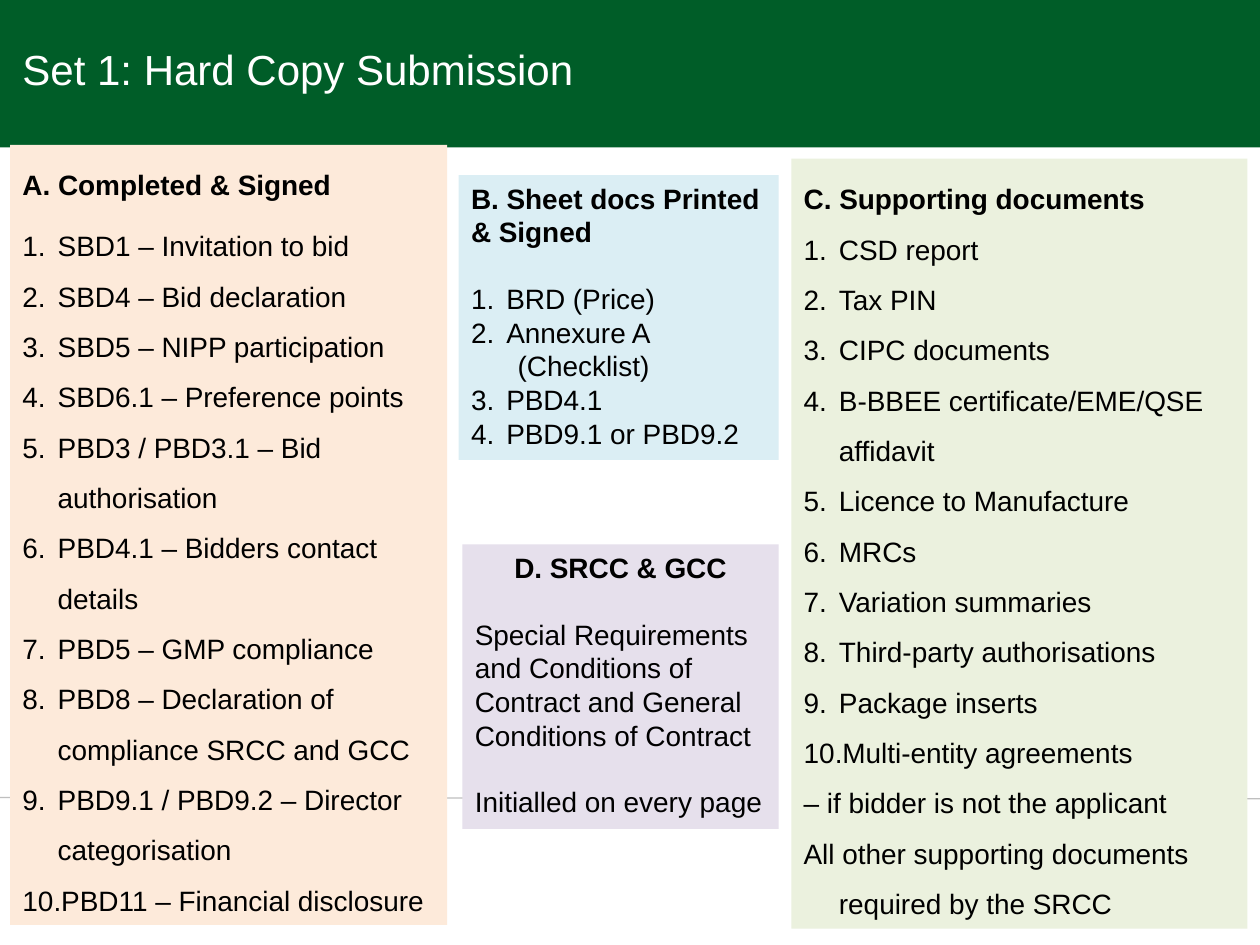
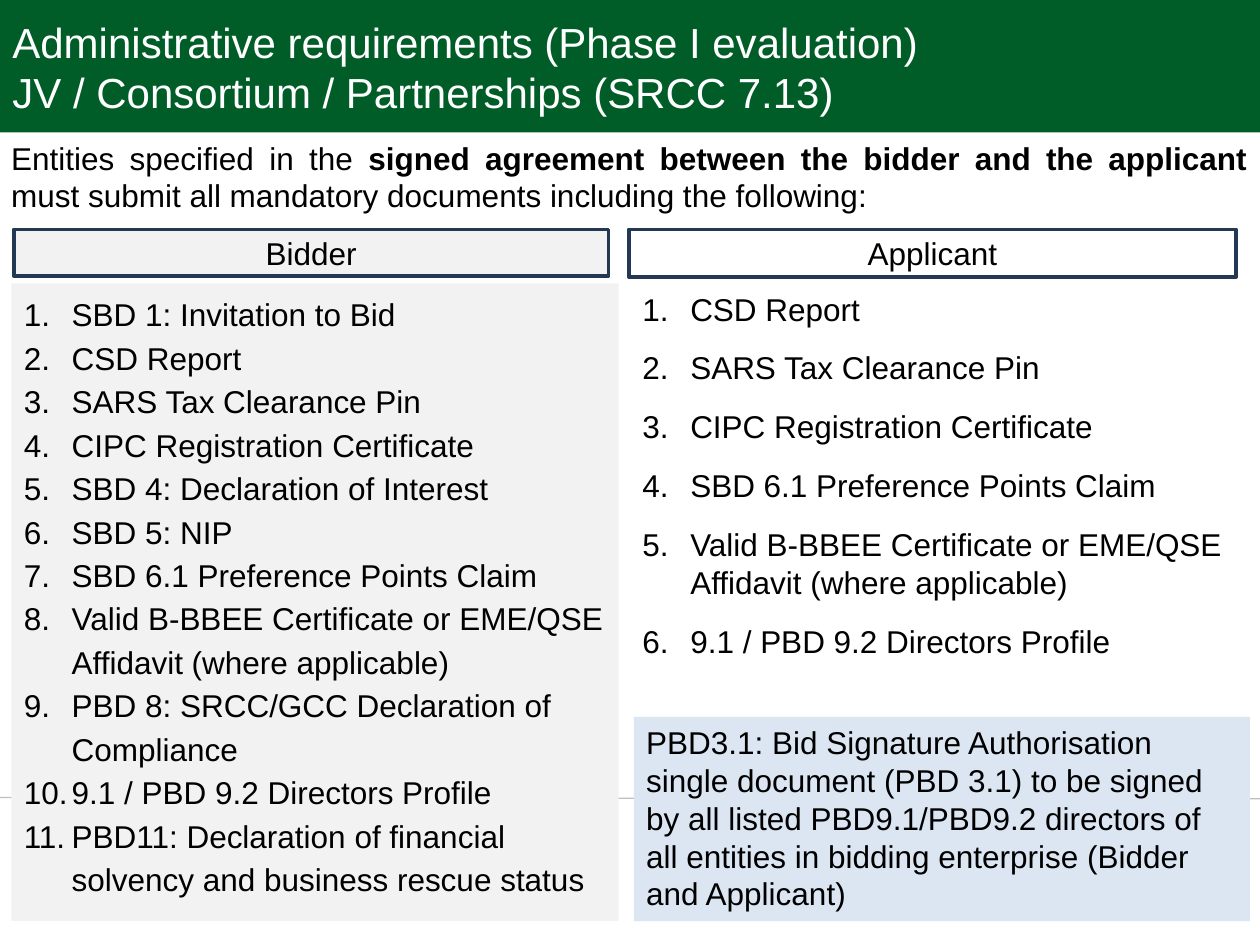
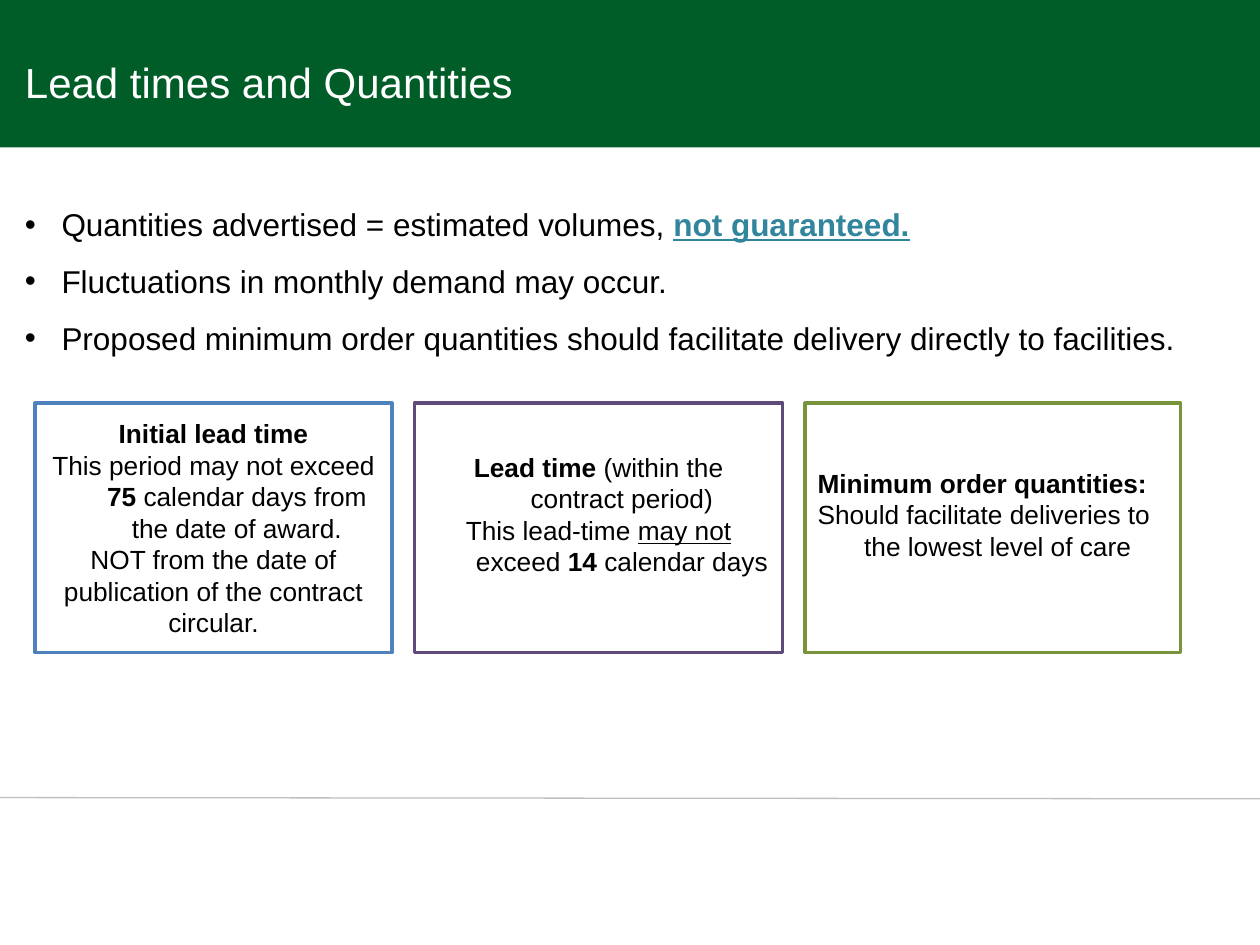
from pptx import Presentation
from pptx import util as u
from pptx.dml.color import RGBColor
from pptx.enum import shapes, text
from pptx.oxml.ns import qn
from lxml import etree

PX = 9144  # EMU per px, 100 px to the inch
FONT = "Arial"
GREEN = RGBColor(0x00, 0x5D, 0x28)
GREY_LINE = RGBColor(0xBF, 0xBF, 0xBF)
WHITE = RGBColor(0xFF, 0xFF, 0xFF)
BLACK = RGBColor(0x00, 0x00, 0x00)
PEACH = RGBColor(0xFD, 0xEA, 0xDA)
AQUA = RGBColor(0xDB, 0xEE, 0xF4)
LILAC = RGBColor(0xE6, 0xE0, 0xEC)
LIME = RGBColor(0xEB, 0xF1, 0xDE)
PALE_GREY = RGBColor(0xF2, 0xF2, 0xF2)
PALE_BLUE = RGBColor(0xDC, 0xE6, 0xF2)
NAVY = RGBColor(0x23, 0x39, 0x53)
TEAL = RGBColor(0x31, 0x85, 0x9C)
BLUE = RGBColor(0x4F, 0x81, 0xBD)
PURPLE = RGBColor(0x60, 0x4A, 0x7B)
OLIVE = RGBColor(0x77, 0x93, 0x3C)

CENTER, JUSTIFY = text.PP_ALIGN.CENTER, text.PP_ALIGN.JUSTIFY
TOP, MIDDLE, BOTTOM = text.MSO_ANCHOR.TOP, text.MSO_ANCHOR.MIDDLE, text.MSO_ANCHOR.BOTTOM


def add_box(page, place, fill=None, line=None, anchor=TOP, grow=True):
    """Add a rectangle, or a text box if it has no fill or line; return its text frame."""
    place = [n * PX for n in place]
    if fill is None and line is None:
        box = page.shapes.add_textbox(*place)
    else:
        box = page.shapes.add_shape(shapes.MSO_SHAPE.RECTANGLE, *place)
        box.shadow.inherit = False
        if fill is None:
            box.fill.background()
        else:
            box.fill.solid()
            box.fill.fore_color.rgb = fill
        if line is None:
            box.line.fill.background()
        else:
            box.line.color.rgb = line
            box.line.width = u.Pt(2)
    frame = box.text_frame
    frame.word_wrap = True
    frame.vertical_anchor = anchor
    fit = text.MSO_AUTO_SIZE
    frame.auto_size = fit.SHAPE_TO_FIT_TEXT if grow else fit.NONE
    return frame


def add_para(frame, spans, size, color=BLACK, align=text.PP_ALIGN.LEFT, left=0, hang=0,
             spacing=None, before=0, after=0, bullet=None, start=1, tab=None):
    """Add a paragraph of (words, style) spans; style holds b for bold, u for underline."""
    para = frame.paragraphs[0]
    if para.runs:
        para = frame.add_paragraph()
        para.space_before = u.Pt(before)
    para.alignment = align
    para.space_after = u.Pt(after)
    if spacing:
        para.line_spacing = spacing
    props = para._p.get_or_add_pPr()
    props.set("marL", str(left * PX))
    props.set("indent", str(-hang * PX))
    if bullet == "number":
        mark = etree.SubElement(props, qn("a:buAutoNum"), type="arabicPeriod")
        if start > 1:
            mark.set("startAt", str(start))
    elif bullet:
        etree.SubElement(props, qn("a:buFont"), typeface=FONT)
        etree.SubElement(props, qn("a:buChar"), char=bullet)
    else:
        etree.SubElement(props, qn("a:buNone"))
    if tab:
        tabs = etree.SubElement(props, qn("a:tabLst"))
        etree.SubElement(tabs, qn("a:tab"), pos=str(tab * PX), algn="l")
    if isinstance(spans, str):
        spans = [(spans, "")]
    for words, style in spans:
        span = para.add_run()
        span.text = words
        span.font.name = FONT
        span.font.size = u.Pt(size)
        span.font.bold = "b" in style
        span.font.underline = "u" in style
        span.font.color.rgb = TEAL if style == "bu" else color


deck = Presentation()
deck.slide_width, deck.slide_height = 1000 * PX, 750 * PX

# Shared band, footer rule and title
titles = [
    (["Set 1: Hard Copy Submission"], (8, 30, 792, 50), TOP),
    (["Administrative requirements (Phase I evaluation)",
      "JV / Consortium / Partnerships (SRCC 7.13)"], (0, 8, 799, 91), TOP),
    (["Lead times and Quantities"], (10, 9, 456, 81), BOTTOM),
]
pages = []
for title_lines, place, anchor in titles:
    page = deck.slides.add_slide(deck.slide_layouts[6])
    add_box(page, (0, 0, 1000, 117), GREEN)
    rule = page.shapes.add_connector(shapes.MSO_CONNECTOR.STRAIGHT,
                                     0, 633 * PX, 1000 * PX, 634 * PX)
    rule.line.color.rgb = GREY_LINE
    rule.line.width = u.Pt(0.75)
    etree.SubElement(rule._element.spPr, qn("a:effectLst"))
    frame = add_box(page, place, anchor=anchor, grow=anchor == TOP)
    for line_text in title_lines:
        add_para(frame, line_text, 24, WHITE)
    pages.append(page)
submission, partnerships, lead_times = pages

# Slide 1: documents in the hard copy set
numbered = dict(size=16, left=28, hang=28, bullet="number", tab=38)
BLANK_LINE = 19

excel_docs = add_box(submission, (364, 139, 254, 226), AQUA)
add_para(excel_docs, [("B. Sheet docs Printed & Signed", "b")], 16)
add_para(excel_docs, "BRD (Price)", before=BLANK_LINE, **numbered)
add_para(excel_docs, "Annexure A", **numbered)
add_para(excel_docs, "(Checklist)", 16, left=37)
for item in ["PBD4.1", "PBD9.1 or PBD9.2"]:
    add_para(excel_docs, item, start=3, **numbered)

signed_forms = [
    "SBD1 – Invitation to bid", "SBD4 – Bid declaration", "SBD5 – NIPP participation",
    "SBD6.1 – Preference points", "PBD3 / PBD3.1 – Bid authorisation",
    "PBD4.1 – Bidders contact details", "PBD5 – GMP compliance",
    "PBD8 – Declaration of compliance SRCC and GCC",
    "PBD9.1 / PBD9.2 – Director categorisation", "PBD11 – Financial disclosure",
]
supporting_docs = [
    "CSD report", "Tax PIN", "CIPC documents", "B-BBEE certificate/EME/QSE affidavit",
    "Licence to Manufacture", "MRCs", "Variation summaries", "Third-party authorisations",
    "Package inserts", "Multi-entity agreements",
]
add_box(submission, (602, 627, 307, 123), WHITE)
for heading, items, place, fill, gap in [
    ("A. Completed & Signed", signed_forms, (8, 115, 347, 619), PEACH, 6),
    ("C. Supporting documents", supporting_docs, (628, 126, 362, 611), LIME, 0),
]:
    column = add_box(submission, place, fill)
    add_para(column, [(heading, "b")], 16, spacing=1.5, after=gap)
    for item in items:
        add_para(column, item, spacing=1.5, after=gap if item == items[-1] else 0, **numbered)
add_para(column, "– if bidder is not the applicant", 16, spacing=1.5)
add_para(column, "All other supporting documents required by the SRCC", 16,
         left=28, hang=28, spacing=1.5)

conditions = add_box(submission, (367, 432, 251, 226), LILAC)
add_para(conditions, [("D. SRCC & GCC", "b")], 16, align=CENTER)
for sentence in ["Special Requirements and Conditions of Contract and General "
                 "Conditions of Contract", "Initialled on every page"]:
    add_para(conditions, sentence, 16, before=BLANK_LINE)

# Slide 2: what bidder and applicant must submit
add_box(partnerships, (0, 635, 1000, 114), WHITE)
intro = add_box(partnerships, (-1, 105, 1001, 71), WHITE)
add_para(intro, [("Entities specified in the ", ""),
                 ("signed agreement between the bidder and the applicant", "b"),
                 (" must submit all mandatory documents including the following:", "")],
         18, align=JUSTIFY, after=6)

signature = add_box(partnerships, (503, 569, 489, 162), PALE_BLUE)
add_para(signature, "PBD3.1: Bid Signature Authorisation", 18)
add_para(signature, "single document (PBD 3.1) to be signed by all listed PBD9.1/PBD9.2 "
         "directors of all entities in bidding enterprise (Bidder and Applicant)", 18)

for heading, place, fill in [("Bidder", (11, 182, 472, 37), PALE_GREY),
                             ("Applicant", (499, 182, 482, 38), None)]:
    frame = add_box(partnerships, place, fill, NAVY, MIDDLE, grow=False)
    add_para(frame, heading, 18, align=CENTER)

shared_certificate = "Valid B-BBEE Certificate or EME/QSE Affidavit (where applicable)"
company_docs = ["CSD Report", "SARS Tax Clearance Pin", "CIPC Registration Certificate"]
points_claim = "SBD 6.1 Preference Points Claim"
directors = "9.1 / PBD 9.2 Directors Profile"
numbered = dict(size=18, left=38, hang=38, bullet="number")

applicant = add_box(partnerships, (500, 225, 482, 306))
for item in company_docs + [points_claim, shared_certificate, directors]:
    add_para(applicant, item, before=6, after=6, **numbered)

bidder = add_box(partnerships, (9, 225, 482, 506), PALE_GREY)
bidder_docs = ["SBD 1: Invitation to Bid", *company_docs, "SBD 4: Declaration of Interest",
               "SBD 5: NIP", points_claim, shared_certificate,
               "PBD 8: SRCC/GCC Declaration of Compliance", directors,
               "PBD11: Declaration of financial solvency and business rescue status"]
for item in bidder_docs:
    add_para(bidder, item, spacing=1.15, tab=50,
             after=8 if item == bidder_docs[-1] else 0, **numbered)

# Slide 3: quantities and lead times
quantities = add_box(lead_times, (10, 143, 980, 177))
for spans in [
    [("Quantities advertised = estimated volumes, ", ""), ("not guaranteed.", "bu")],
    "Fluctuations in monthly demand may occur.",
    "Proposed minimum order quantities should facilitate delivery directly to facilities.",
]:
    add_para(quantities, spans, 18, left=29, hang=29, spacing=1.5, bullet="•")

hanging = dict(size=15, left=37, hang=37)
initial = add_box(lead_times, (28, 320, 283, 198), WHITE, BLUE, MIDDLE, grow=False)
add_para(initial, [("Initial lead time", "b")], align=CENTER, **hanging)
add_para(initial, [("This period may not exceed ", ""), ("75 ", "b"),
                   ("calendar days from the date of award.", "")], align=CENTER, **hanging)
add_para(initial, "NOT from the date of publication of the contract circular.", 15,
         align=CENTER)

contract = add_box(lead_times, (329, 320, 292, 198), WHITE, PURPLE, MIDDLE, grow=False)
add_para(contract, [("Lead time ", "b"), ("(within the contract period)", "")],
         align=CENTER, **hanging)
add_para(contract, [("This lead-time ", ""), ("may not ", "u"), ("exceed ", ""), ("14", "b"),
                    (" calendar days", "")], align=CENTER, **hanging)

minimum = add_box(lead_times, (639, 320, 298, 198), WHITE, OLIVE, MIDDLE, grow=False)
add_para(minimum, [("Minimum order quantities:", "b")], **hanging)
add_para(minimum, "Should facilitate deliveries to the lowest level of care", **hanging)
for frame in (contract, minimum):
    frame.margin_bottom = 27 * PX

deck.save("out.pptx")
